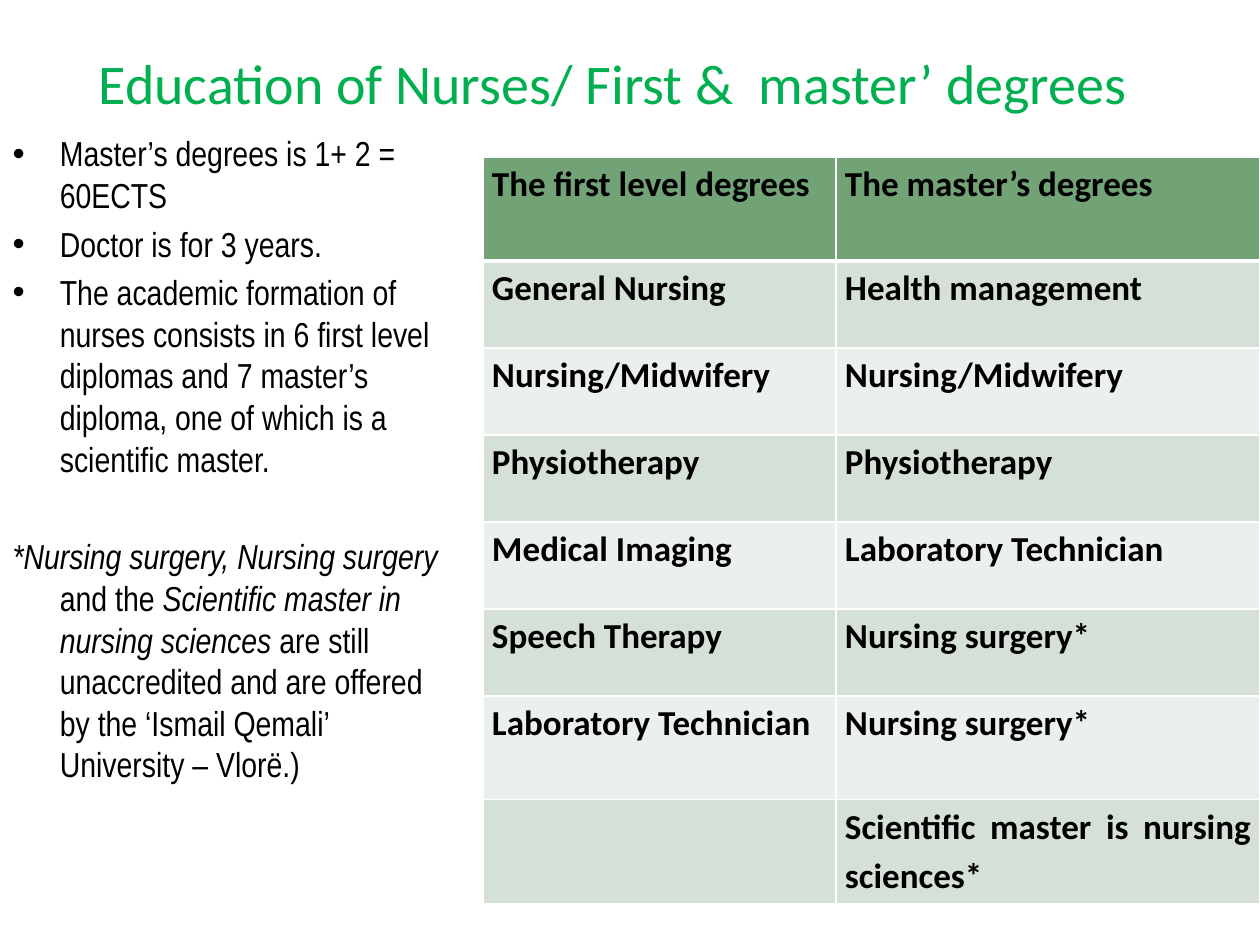
from lxml import etree
from pptx import Presentation
from pptx.dml.color import RGBColor
from pptx.enum.text import MSO_ANCHOR, MSO_AUTO_SIZE, PP_ALIGN
from pptx.oxml.ns import qn
from pptx.util import Pt

CENTER, JUSTIFY = PP_ALIGN.CENTER, PP_ALIGN.JUSTIFY
MIDDLE, TOP = MSO_ANCHOR.MIDDLE, MSO_ANCHOR.TOP
NO_FIT = MSO_AUTO_SIZE.NONE
EMU_PER_PX = 914400 / 126

TITLE = "Education of Nurses/ First &  master’ degrees "
BULLETS = [
    "Master’s degrees is 1+ 2 = 60ECTS",
    "Doctor is for 3 years.",
    "The academic formation of nurses consists in 6 first level diplomas "
    "and 7 master’s diploma, one of which is a scientific master.",
]
FOOTNOTE = [
    ("*Nursing surgery, Nursing surgery", True),
    (" and the ", False),
    ("Scientific master in nursing sciences", True),
    (" are still unaccredited and are offered by the "
     "‘Ismail Qemali’ University – Vlorë.)", False),
]
DEGREES = [
    ("The first level degrees", "The master’s degrees"),
    ("General Nursing", "Health management"),
    ("Nursing/Midwifery", "Nursing/Midwifery"),
    ("Physiotherapy", "Physiotherapy"),
    ("Medical Imaging", "Laboratory Technician"),
    ("Speech Therapy ", "Nursing surgery*"),
    ("Laboratory Technician", "Nursing surgery*"),
    ("", "Scientific master is nursing sciences* "),
]
COL_WIDTHS = [353, 424]
ROW_HEIGHTS = [104] + [87] * 5 + [104] * 2
HEADER_FILL, BAND_FILLS = "72A376", ["EBF0EC", "D5E0D6"]


def px(n):
    return int(n * EMU_PER_PX)


def rgb(color):
    return RGBColor.from_string(color)


def place(s, x, y, w, h):
    s.left, s.top, s.width, s.height = px(x), px(y), px(w), px(h)


def style(p, font, size, color, bold=False):
    for r in p.runs:
        r.font.name, r.font.size, r.font.bold = font, Pt(size), bold
        r.font.color.rgb = rgb(color)


def set_borders(cell, widths):
    tcPr = cell._tc.get_or_add_tcPr()
    for side, width in widths.items():
        ln = etree.SubElement(tcPr, qn("a:ln" + side), w=str(Pt(width)))
        fill = etree.SubElement(ln, qn("a:solidFill"))
        etree.SubElement(fill, qn("a:srgbClr"), val="FFFFFF")


def add_title(slide):
    s = slide.shapes.title
    place(s, 42, 38, 1155, 88)
    tf = s.text_frame
    tf.text = TITLE
    tf.auto_size, tf.vertical_anchor = NO_FIT, MIDDLE
    p = tf.paragraphs[0]
    p.alignment = CENTER
    style(p, "Calibri", 32, "00B050")


def add_body(slide):
    s = slide.placeholders[1]
    place(s, 0, 126, 462, 718)
    tf = s.text_frame
    tf.text = "\n".join(BULLETS)
    tf.auto_size, tf.vertical_anchor = NO_FIT, TOP
    p = tf.add_paragraph()
    p.space_before = Pt(32)
    etree.SubElement(p._p.get_or_add_pPr(), qn("a:buNone"))
    for text, italic in FOOTNOTE:
        r = p.add_run()
        r.text, r.font.italic = text, italic
    for p in tf.paragraphs:
        style(p, "Arial Narrow", 19.8, "000000")


def add_degrees(slide):
    table = slide.shapes.add_table(
        len(DEGREES), len(COL_WIDTHS), px(483), px(157),
        px(sum(COL_WIDTHS)), px(sum(ROW_HEIGHTS))).table
    for col, width in zip(table.columns, COL_WIDTHS):
        col.width = px(width)
    for i, (row, height) in enumerate(zip(table.rows, ROW_HEIGHTS)):
        row.height = px(height)
        for cell, text in zip(row.cells, DEGREES[i]):
            cell.margin_left = cell.margin_right = px(9)
            cell.margin_top = cell.margin_bottom = 0
            set_borders(cell, {"L": 1, "R": 1, "T": 3 if i == 1 else 1,
                               "B": 3 if i == 0 else 1})
            cell.fill.solid()
            cell.fill.fore_color.rgb = rgb(BAND_FILLS[i % 2] if i else HEADER_FILL)
            cell.text_frame.text = text
            p = cell.text_frame.paragraphs[0]
            p.alignment, p.line_spacing, p.space_after = JUSTIFY, 1.15, Pt(10)
            style(p, "Calibri", 20, "000000", bold=True)


def main():
    prs = Presentation()
    prs.slide_width, prs.slide_height = px(1260), px(945)
    slide = prs.slides.add_slide(prs.slide_layouts[1])
    add_title(slide)
    add_body(slide)
    add_degrees(slide)
    prs.save("out.pptx")


if __name__ == "__main__":
    main()
